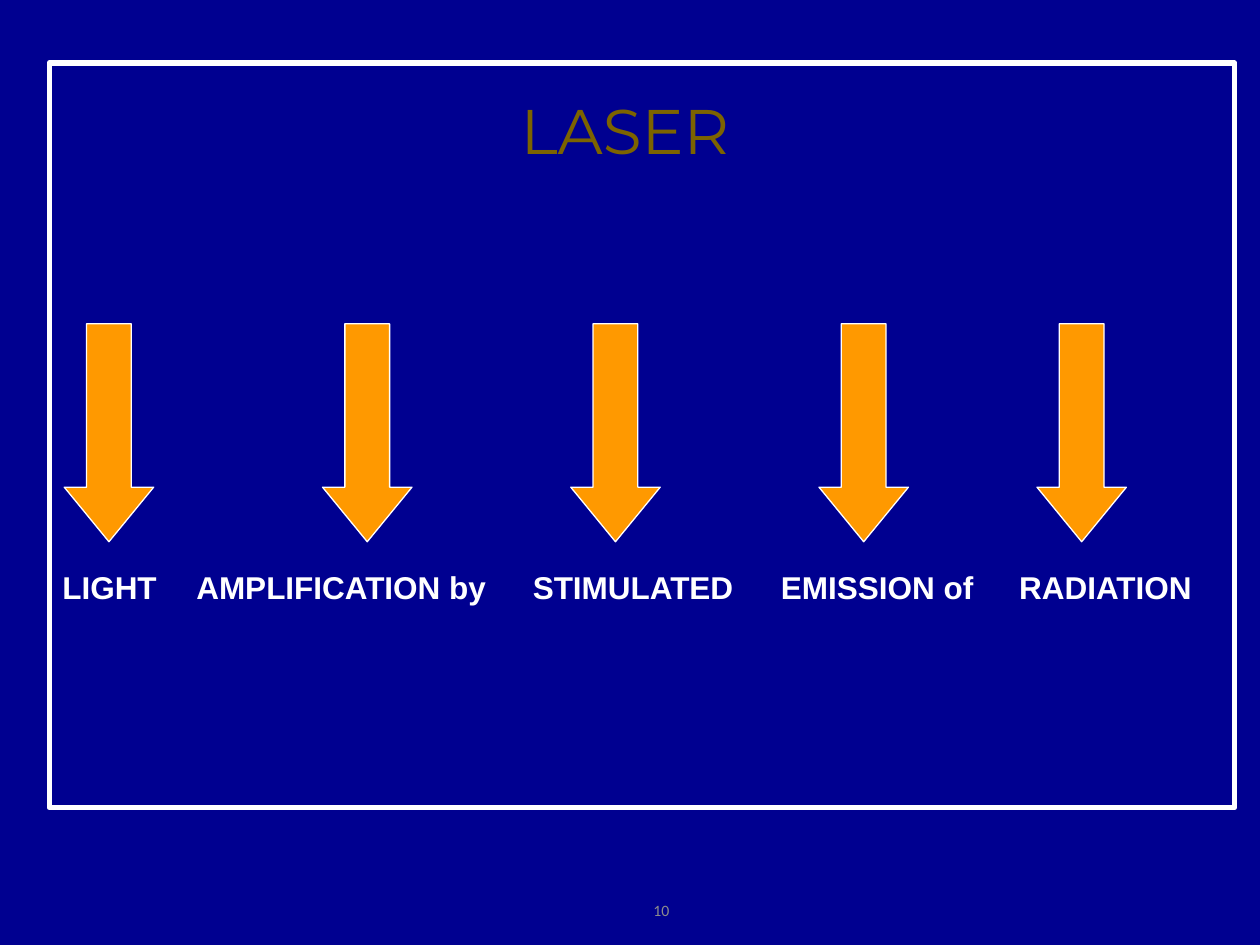
import pptx
import pptx.util
import pptx.dml.color
import pptx.enum.shapes
import pptx.enum.text
from pptx.util import Inches

ALIGN = pptx.enum.text.PP_ALIGN
SHAPE = pptx.enum.shapes.MSO_SHAPE

# word, arrow left, label left, label width, label alignment
WORDS = [
    ("LIGHT", 0.51, 0.2, 1.34, ALIGN.CENTER),
    ("AMPLIFICATION by", 2.56, 1.46, 2.6, ALIGN.LEFT),
    ("STIMULATED", 4.53, 4.13, 1.81, ALIGN.LEFT),
    ("EMISSION of", 6.5, 6.1, 1.73, ALIGN.LEFT),
    ("RADIATION", 8.23, 7.99, 1.65, ALIGN.LEFT),
]


def color(value):
    return pptx.dml.color.RGBColor.from_string(value)


class SlideBuilder:
    navy, white, orange, gold, gray = "000090", "FFFFFF", "FF9900", "7C6300", "8C8C8C"

    def __init__(self, deck):
        self.slide = deck.slides.add_slide(deck.slide_layouts[6])
        self.slide.background.fill.solid()
        self.slide.background.fill.fore_color.rgb = color(self.navy)

    def text(self, words, left, top, width, height, font, size, ink,
             align=ALIGN.CENTER, bold=False):
        box = self.slide.shapes.add_textbox(
            Inches(left), Inches(top), Inches(width), Inches(height))
        frame = box.text_frame
        frame.word_wrap = True
        frame.text = words
        para = frame.paragraphs[0]
        para.alignment = align
        span = para.runs[0]
        span.font.name = font
        span.font.size = pptx.util.Pt(size)
        span.font.bold = bold
        span.font.color.rgb = color(ink)

    def shape(self, kind, left, top, width, height, line_width, fill=None):
        shape = self.slide.shapes.add_shape(
            kind, Inches(left), Inches(top), Inches(width), Inches(height))
        shape.shadow.inherit = False
        if fill:
            shape.fill.solid()
            shape.fill.fore_color.rgb = color(fill)
        else:
            shape.fill.background()
        shape.line.color.rgb = color(self.white)
        shape.line.width = pptx.util.Pt(line_width)
        return shape

    def arrow(self, left):
        arrow = self.shape(SHAPE.DOWN_ARROW, left, 2.57, 0.71, 1.73, 0.75, self.orange)
        arrow.adjustments[0] = 0.5
        arrow.adjustments[1] = 0.61

    def label(self, word, left, width, align):
        self.text(word, left, 4.46, width, 0.4, "Arial", 18, self.white, align, True)


def main():
    deck = pptx.Presentation()
    deck.slide_width, deck.slide_height = Inches(10), Inches(7.5)
    page = SlideBuilder(deck)
    page.text("10", 4.75, 7.1, 1, 0.25, "Calibri", 9, page.gray)
    page.text("LASER", 0.43, 0.68, 9.06, 1.49, "Montserrat", 36, page.gold)
    for word, arrow_left, label_left, label_width, align in WORDS:
        page.arrow(arrow_left)
        page.label(word, label_left, label_width, align)
    page.shape(SHAPE.RECTANGLE, 0.39, 0.5, 9.41, 5.91, 3)
    deck.save("out.pptx")


if __name__ == "__main__":
    main()
